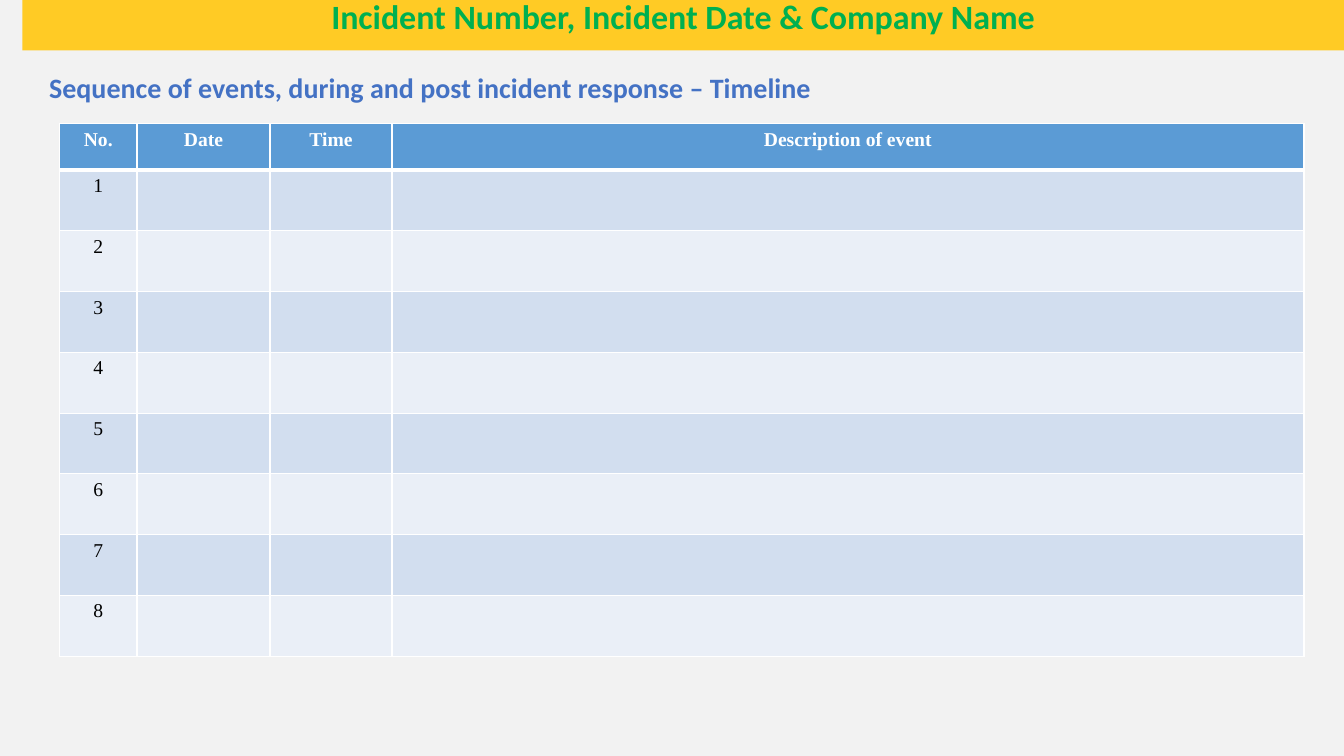
from dataclasses import dataclass

from lxml import etree
from pptx import Presentation
from pptx.dml.color import RGBColor
from pptx.enum.shapes import MSO_SHAPE
from pptx.enum.text import MSO_ANCHOR, PP_ALIGN
from pptx.oxml.ns import qn
from pptx.util import Pt

RECTANGLE = MSO_SHAPE.RECTANGLE
MIDDLE = MSO_ANCHOR.MIDDLE
LEFT, CENTER = PP_ALIGN.LEFT, PP_ALIGN.CENTER

COLORS = {
    "background": "F2F2F2",
    "band": "FFCB25",
    "title": "00B050",
    "subtitle": "4472C4",
    "header": "5B9BD5",
    "odd_row": "D2DEEF",
    "even_row": "EAEFF7",
    "white": "FFFFFF",
    "black": "000000",
}

HEADER_HEIGHT, EVENT_HEIGHT = 33, 43.4
EVENT_COUNT = 8
THIN, THICK = 1, 3


@dataclass(frozen=True)
class Column:
    heading: str
    width: float


@dataclass(frozen=True)
class TextStyle:
    font: str
    size: float
    color: str
    bold: bool
    align: PP_ALIGN


COLUMNS = [
    Column("No.", 55.4),
    Column("Date", 95),
    Column("Time", 87.1),
    Column("Description of event", 651.5),
]
TITLE = TextStyle("Calibri", 24.3, "title", True, CENTER)
SUBTITLE = TextStyle("Calibri", 20, "subtitle", True, LEFT)
HEADING = TextStyle("Times New Roman", 14, "white", True, CENTER)
NUMBER = TextStyle("Times New Roman", 14, "black", False, CENTER)


def rgb(name: str) -> RGBColor:
    return RGBColor.from_string(COLORS[name])


def paint(fill, color: str) -> None:
    fill.solid()
    fill.fore_color.rgb = rgb(color)


def write(frame, text: str, style: TextStyle) -> None:
    paragraph = frame.paragraphs[0]
    paragraph.text = text
    paragraph.alignment = style.align
    font_format = {"name": style.font, "size": Pt(style.size), "bold": style.bold}
    for attribute, value in font_format.items():
        setattr(paragraph.font, attribute, value)
    paragraph.font.color.rgb = rgb(style.color)


def add_borders(cell, top: float, bottom: float) -> None:
    """Draw white cell edges; call before filling, as the schema puts lines first."""
    properties = cell._tc.get_or_add_tcPr()
    edges = {"lnL": THIN, "lnR": THIN, "lnT": top, "lnB": bottom}
    for edge, width in edges.items():
        line = etree.SubElement(properties, qn(f"a:{edge}"), w=str(Pt(width)))
        solid = etree.SubElement(line, qn("a:solidFill"))
        etree.SubElement(solid, qn("a:srgbClr"), val=COLORS["white"])


def add_title_band(slide) -> None:
    band = slide.shapes.add_shape(RECTANGLE, Pt(16), Pt(0), Pt(944), Pt(36))
    band.shadow.inherit = False
    paint(band.fill, "band")
    band.line.fill.background()
    frame_format = {
        "margin_top": Pt(0),
        "margin_bottom": Pt(9),
        "vertical_anchor": MIDDLE,
        "word_wrap": True,
    }
    for attribute, value in frame_format.items():
        setattr(band.text_frame, attribute, value)
    write(band.text_frame, "Incident Number, Incident Date & Company Name", TITLE)
    band.text_frame.paragraphs[0].line_spacing = 0.9


def add_subtitle(slide) -> None:
    subtitle = slide.shapes.add_textbox(Pt(28), Pt(47), Pt(675), Pt(42))
    subtitle.text_frame.word_wrap = True
    write(
        subtitle.text_frame,
        "Sequence of events, during and post incident response – Timeline",
        SUBTITLE,
    )


def add_timeline(slide) -> None:
    width = sum(column.width for column in COLUMNS)
    height = HEADER_HEIGHT + EVENT_COUNT * EVENT_HEIGHT
    timeline = slide.shapes.add_table(
        EVENT_COUNT + 1, len(COLUMNS), Pt(42.5), Pt(88.5), Pt(width), Pt(height)
    ).table
    timeline.horz_banding = False
    for table_column, column in zip(timeline.columns, COLUMNS):
        table_column.width = Pt(column.width)

    for number, row in enumerate(timeline.rows):
        is_header = number == 0
        row.height = Pt(HEADER_HEIGHT if is_header else EVENT_HEIGHT)
        band_color = "odd_row" if number % 2 else "even_row"
        for cell, column in zip(row.cells, COLUMNS):
            add_borders(
                cell,
                top=THICK if number == 1 else THIN,
                bottom=THICK if is_header else THIN,
            )
            paint(cell.fill, "header" if is_header else band_color)
            if is_header:
                write(cell.text_frame, column.heading, HEADING)
        if not is_header:
            write(row.cells[0].text_frame, str(number), NUMBER)


def main() -> None:
    presentation = Presentation()
    presentation.slide_width, presentation.slide_height = Pt(960), Pt(540)
    slide = presentation.slides.add_slide(presentation.slide_layouts[6])
    paint(slide.background.fill, "background")
    add_title_band(slide)
    add_subtitle(slide)
    add_timeline(slide)
    presentation.save("out.pptx")


if __name__ == "__main__":
    main()
